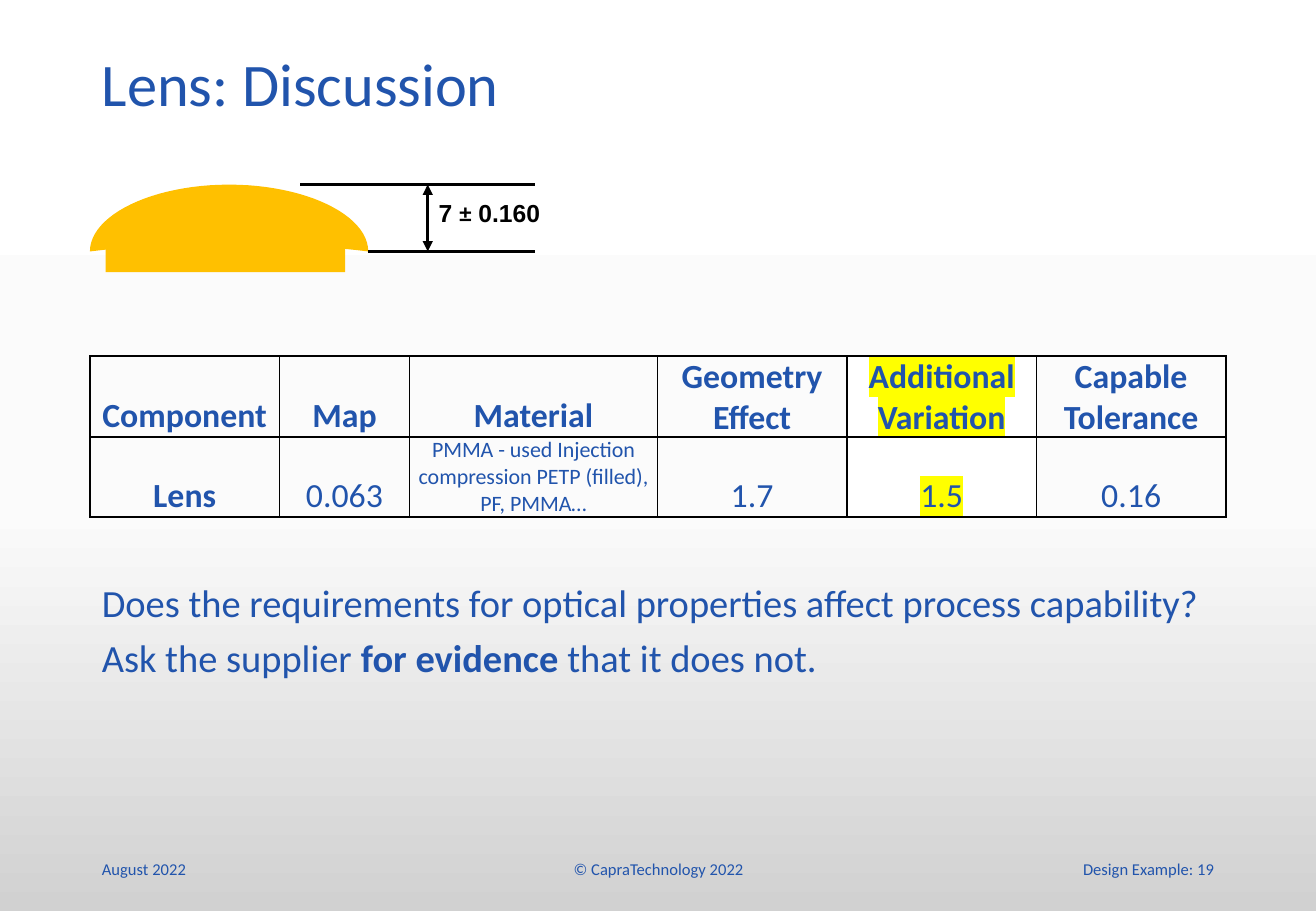
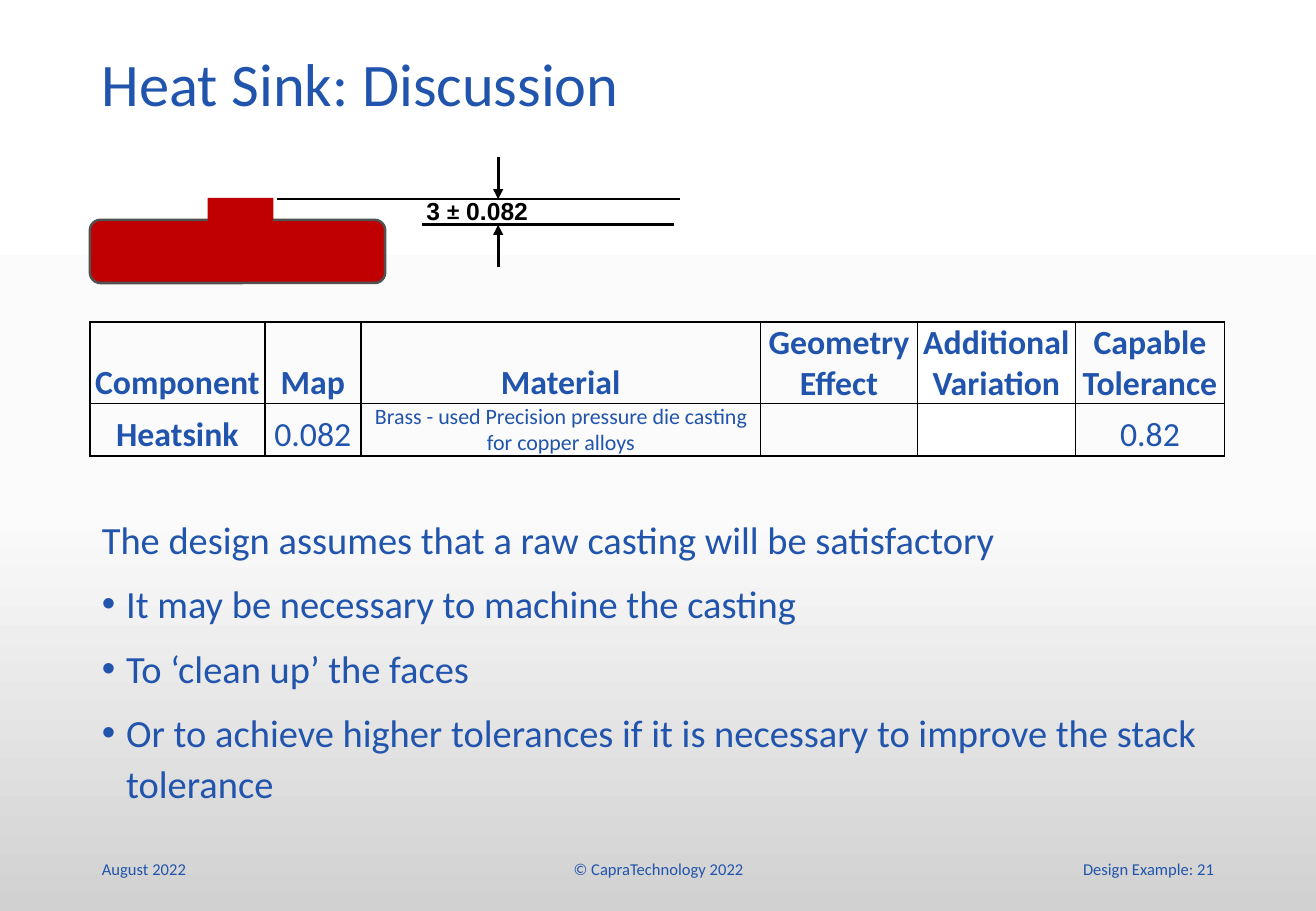
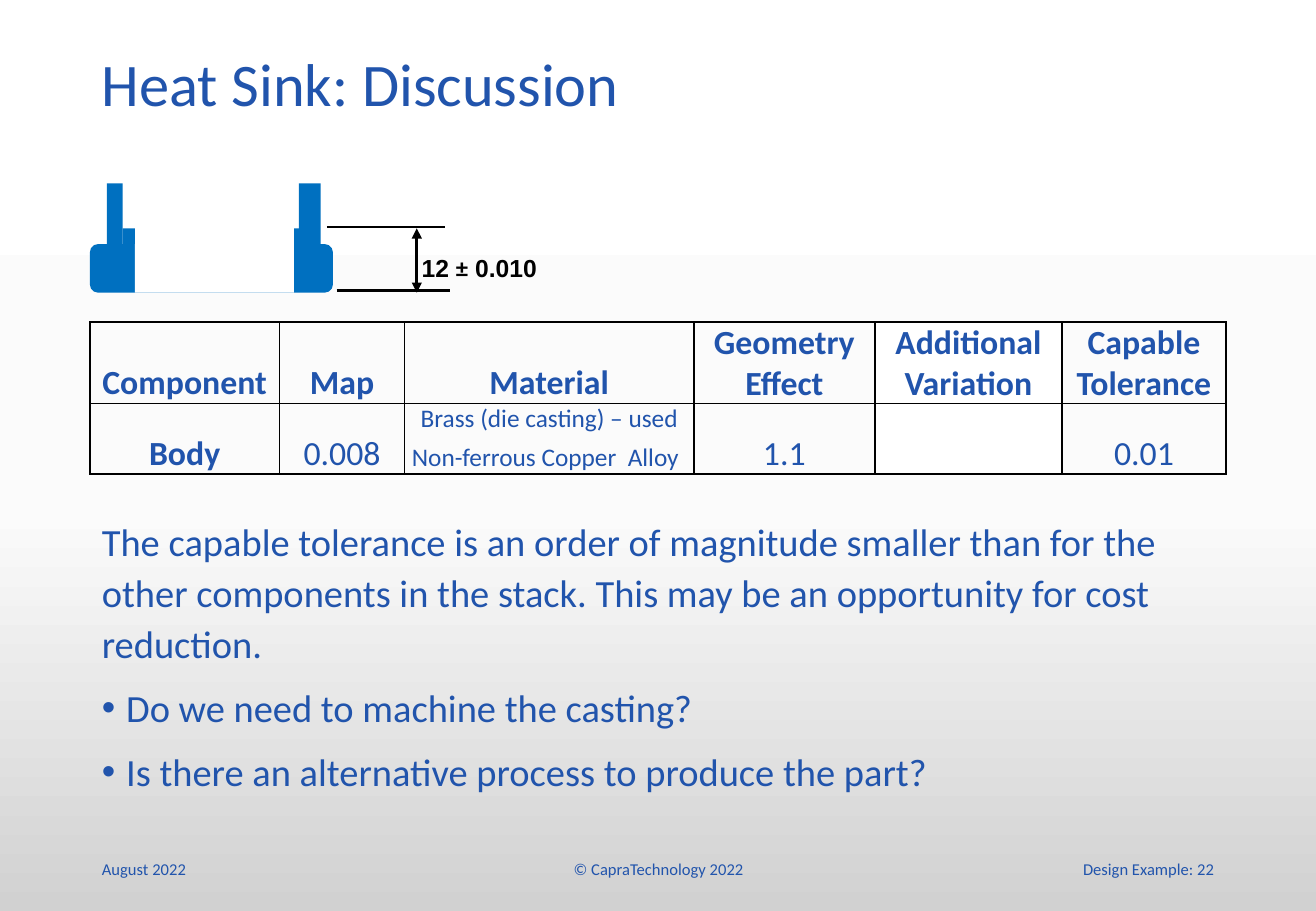
import copy
import dataclasses

import pptx
import pptx.dml.color
import pptx.enum.shapes
import pptx.enum.text
import pptx.oxml
import pptx.oxml.ns
import pptx.util
from pptx.util import Inches

SHAPE = pptx.enum.shapes.MSO_SHAPE
ALIGN = pptx.enum.text.PP_ALIGN
ANCHOR = pptx.enum.text.MSO_ANCHOR
qn = pptx.oxml.ns.qn


@dataclasses.dataclass(frozen=True)
class Theme:
    font: str = "Calibri"
    label_font: str = "Arial"
    blue: str = "2154AC"
    black: str = "000000"
    white: str = "FFFFFF"
    yellow: str = "FFFF00"
    amber: str = "FFC000"
    red: str = "C00000"
    grey: str = "515151"
    body_blue: str = "0070C0"
    stops: tuple = ((0, "FFFFFF"), (0.56, "FBFBFB"), (1, "D1D1D1"))
    title: float = 35.8
    text: float = 22.8
    table: float = 20
    label: float = 14.6
    footer: float = 9.8
    space: float = 8.1
    left: float = 0.74
    width: float = 9.34


T = Theme()
HEADERS = ("Component", "Map", "Material", "Geometry Effect",
           "Additional Variation", "Capable Tolerance")
MATERIAL, VARIATION = 2, 4


def rgb(color):
    return pptx.dml.color.RGBColor.from_string(color)


def xml_child(parent, tag, **attrs):
    child = pptx.oxml.parse_xml(f'<{tag} {pptx.oxml.ns.nsdecls("a")}/>')
    for name, value in attrs.items():
        child.set(name, str(value))
    parent.append(child)
    return child


def style_run(r, size, color=T.blue, bold=False, font=T.font):
    r.font.size = pptx.util.Pt(size)
    r.font.name = font
    r.font.bold = bold
    r.font.color.rgb = rgb(color)


def highlight(r):
    rpr = r.font._element
    mark = xml_child(rpr, "a:highlight")
    xml_child(mark, "a:srgbClr", val=T.yellow)
    rpr.find(qn("a:solidFill")).addnext(mark)


def add_text(s, left, top, width, height, text, size, align=ALIGN.LEFT,
             anchor=ANCHOR.TOP):
    sp = s.shapes.add_textbox(Inches(left), Inches(top), Inches(width), Inches(height))
    tf = sp.text_frame
    tf.word_wrap = True
    tf.vertical_anchor = anchor
    tf.text = text
    p = tf.paragraphs[0]
    p.alignment = align
    for r in p.runs:
        style_run(r, size)
    return tf


def add_body(s, top, height, items, spacing, bulleted):
    tf = add_text(s, T.left, top, T.width, height, "", T.text)
    for i, item in enumerate(items):
        p = tf.add_paragraph() if i else tf.paragraphs[0]
        if i and bulleted:
            ppr = p._p.get_or_add_pPr()
            ppr.set("marL", str(Inches(0.2)))
            ppr.set("indent", str(Inches(-0.2)))
            xml_child(ppr, "a:buFont", typeface=T.label_font)
            xml_child(ppr, "a:buChar", char="•")
        p.line_spacing = spacing
        if i:
            p.space_before = pptx.util.Pt(T.space)
        for part, text in enumerate(item.split("**")):
            r = p.add_run()
            r.text = text
            style_run(r, T.text, bold=part % 2 == 1)


def add_slide(prs, title, number):
    s = prs.slides.add_slide(prs.slide_layouts[6])
    tf = add_text(s, T.left, 0.4, T.width, 0.83, title, T.title)
    tf.paragraphs[0].line_spacing = 0.9
    for left, width, text, align in (
            (T.left, 2.44, "August 2022", ALIGN.LEFT),
            (3.59, 3.66, "© CapraTechnology 2022", ALIGN.CENTER),
            (7.65, 2.44, f"Design Example: {number}", ALIGN.RIGHT)):
        add_text(s, left, 6.95, width, 0.4, text, T.footer, align, ANCHOR.MIDDLE)
    return s


def border(cell):
    tcpr = cell._tc.get_or_add_tcPr()
    for i, tag in enumerate(("a:lnL", "a:lnR", "a:lnT", "a:lnB")):
        ln = xml_child(tcpr, tag, w=pptx.util.Pt(1))
        xml_child(xml_child(ln, "a:solidFill"), "a:srgbClr", val=T.black)
        tcpr.insert(i, ln)


def add_cell(cell, text, size, bold, fill, marked):
    cell.margin_left = cell.margin_right = cell.margin_top = cell.margin_bottom = 0
    cell.vertical_anchor = ANCHOR.BOTTOM
    if fill:
        cell.fill.solid()
        cell.fill.fore_color.rgb = rgb(T.white)
    else:
        cell.fill.background()
    border(cell)
    cell.text_frame.text = text
    p = cell.text_frame.paragraphs[0]
    p.alignment = ALIGN.CENTER
    for r in p.runs:
        style_run(r, size, bold=bold)
        if marked:
            highlight(r)


def add_tolerances(s, top, widths, heights, values, material_size, marked=False):
    frame = s.shapes.add_table(2, len(widths), Inches(T.left), Inches(top),
                               Inches(T.width), Inches(sum(heights)))
    table = frame.table
    table.first_row = table.horz_banding = False
    for column, width in zip(table.columns, widths):
        column.width = Inches(width)
    for row, height in zip(table.rows, heights):
        row.height = Inches(height)
    for i, texts in enumerate((HEADERS, values)):
        for j, text in enumerate(texts):
            size = material_size if i and j == MATERIAL else T.table
            variation = j == VARIATION
            add_cell(table.cell(i, j), text, size, i == 0 or j == 0,
                     variation, variation and marked)
    return table


def paint(sp, fill, outline=None):
    sp.shadow.inherit = False
    sp.fill.solid()
    sp.fill.fore_color.rgb = rgb(fill)
    if outline:
        sp.line.color.rgb = rgb(outline)
        sp.line.width = pptx.util.Pt(1.5)
    else:
        sp.line.fill.background()


def add_block(s, left, top, width, height, fill, outline=None, rounded=False):
    kind = SHAPE.ROUNDED_RECTANGLE if rounded else SHAPE.RECTANGLE
    sp = s.shapes.add_shape(kind, Inches(left), Inches(top), Inches(width), Inches(height))
    paint(sp, fill, outline)


def add_line(s, x1, y1, x2, y2, weight=1.5, head=False, tail=False):
    line = s.shapes.add_connector(pptx.enum.shapes.MSO_CONNECTOR.STRAIGHT,
                                  Inches(x1), Inches(y1), Inches(x2), Inches(y2))
    line.line.color.rgb = rgb(T.black)
    line.line.width = pptx.util.Pt(weight)
    ln = line.line._get_or_add_ln()
    for tag, wanted in (("a:headEnd", head), ("a:tailEnd", tail)):
        if wanted:
            xml_child(ln, tag, type="triangle")
    xml_child(line._element.spPr, "a:effectLst")


def add_dimension(s, left, top, nominal, tolerance):
    tf = add_text(s, left, top, 1.1, 0.33, "", T.label)
    tf.margin_left = tf.margin_right = tf.margin_top = tf.margin_bottom = Inches(0.04)
    for text, font in ((f"{nominal} ", T.label_font), ("±", T.font),
                       (f" {tolerance}", T.label_font)):
        r = tf.paragraphs[0].add_run()
        r.text = text
        style_run(r, T.label, T.black, True, font)


def curve(points, steps=24):
    a, b, c, d = points
    for i in range(1, steps + 1):
        t = i / steps
        u = 1 - t
        yield tuple(Inches(u**3 * a[k] + 3 * u * u * t * b[k] + 3 * u * t * t * c[k]
                           + t**3 * d[k]) for k in (0, 1))


def add_dome(s, left, right, top, base, fill):
    middle = (left + right) / 2
    start, end, peak = (left, base), (right, base), (middle, top)
    shoulder = base - 0.3
    curves = ((start, (left, shoulder), (middle - 0.63, top), peak),
              (peak, (middle + 0.63, top), (right, shoulder), end),
              (end, (right - 0.75, base - 0.09), (left + 0.75, base - 0.09), start))
    builder = s.shapes.build_freeform(Inches(left), Inches(base))
    for points in curves:
        builder.add_line_segments(list(curve(points)), close=False)
    builder.add_line_segments([], close=True)
    paint(builder.convert_to_shape(), fill)


def lens_slide(prs):
    s = add_slide(prs, "Lens: Discussion", 19)
    add_body(s, 4.76, 2.01, (
        "Does the requirements for optical properties affect process capability?",
        "Ask the supplier **for evidence **that it does not."), 0.9, False)
    add_tolerances(s, 2.93, (1.56, 1.07, 2.04, 1.56, 1.56, 1.56), (0.66, 0.66), (
        "Lens", "0.063", "PMMA - used Injection compression PETP (filled), PF, PMMA…",
        "1.7", "1.5", "0.16"), 13, marked=True)
    add_dome(s, 0.74, 3.03, 1.52, 2.07, T.amber)
    add_block(s, 0.87, 1.96, 1.97, 0.28, T.amber)
    add_line(s, 2.47, 1.52, 4.4, 1.52)
    add_line(s, 3.03, 2.07, 4.4, 2.07)
    add_line(s, 3.52, 1.52, 3.52, 2.07, 2, head=True, tail=True)
    add_dimension(s, 3.57, 1.59, "7", "0.160")


def heat_sink_slide(prs):
    s = add_slide(prs, "Heat Sink: Discussion", 21)
    add_body(s, 4.16, 2.62, (
        "The design assumes that a raw casting will be satisfactory",
        "It may be necessary to machine the casting",
        "To ‘clean up’ the faces",
        "Or to achieve higher tolerances if it is necessary to improve the stack tolerance"),
        1.1, True)
    add_tolerances(s, 2.65, (1.44, 0.79, 3.29, 1.29, 1.3, 1.23), (0.67, 0.43), (
        "Heatsink", "0.082", "Brass - used Precision pressure die casting for copper alloys",
        "", "", "0.82"), 13)
    add_block(s, 0.74, 1.81, 2.43, 0.52, T.red, T.grey, rounded=True)
    add_block(s, 1.71, 1.63, 0.54, 0.3, T.red)
    add_line(s, 3.47, 1.85, 5.55, 1.85)
    add_line(s, 2.28, 1.64, 5.6, 1.64)
    add_line(s, 4.1, 1.29, 4.1, 1.64, 1.75, tail=True)
    add_line(s, 4.1, 2.2, 4.1, 1.85, 1.75, tail=True)
    add_dimension(s, 3.47, 1.57, "3", "0.082")


def body_slide(prs):
    s = add_slide(prs, "Heat Sink: Discussion", 22)
    add_body(s, 4.18, 2.6, (
        "The capable tolerance is an order of magnitude smaller than for the other "
        "components in the stack. This may be an opportunity for cost reduction.",
        "Do we need to machine the casting?",
        "Is there an alternative process to produce the part?"), 1.1, True)
    table = add_tolerances(s, 2.65, (1.56, 1.03, 2.38, 1.49, 1.54, 1.35), (0.67, 0.58), (
        "Body", "0.008", "Brass (die casting) – used Non-ferrous Copper  Alloy",
        "1.1", "", "0.01"), 15)
    r = table.cell(1, MATERIAL).text_frame.paragraphs[0].add_run()
    r.text = " "
    style_run(r, T.table)
    add_block(s, 0.74, 2.01, 2, 0.4, T.body_blue, rounded=True)
    for left, top, width, height in ((0.88, 1.51, 0.13, 0.5), (2.46, 1.51, 0.18, 0.5),
                                     (1.01, 1.88, 0.1, 0.13), (2.42, 1.88, 0.1, 0.13)):
        add_block(s, left, top, width, height, T.body_blue)
    add_block(s, 1.11, 2.01, 1.31, 0.4, T.white)
    add_line(s, 3.43, 1.88, 3.43, 2.41, 2, head=True, tail=True)
    add_dimension(s, 3.43, 2.04, "12", "0.010")
    add_line(s, 2.69, 1.87, 3.66, 1.87)
    add_line(s, 2.77, 2.39, 3.7, 2.39)


def set_background(prs):
    fill = prs.slide_master.background.fill
    fill.gradient()
    fill.gradient_angle = 270
    first = fill.gradient_stops[0]._gs
    first.addnext(copy.deepcopy(first))
    for stop, (position, color) in zip(fill.gradient_stops, T.stops):
        stop.position = position
        stop.color.rgb = rgb(color)


def main():
    prs = pptx.Presentation()
    prs.slide_width = Inches(10.83)
    prs.slide_height = Inches(7.5)
    set_background(prs)
    lens_slide(prs)
    heat_sink_slide(prs)
    body_slide(prs)
    prs.save("out.pptx")


if __name__ == "__main__":
    main()
